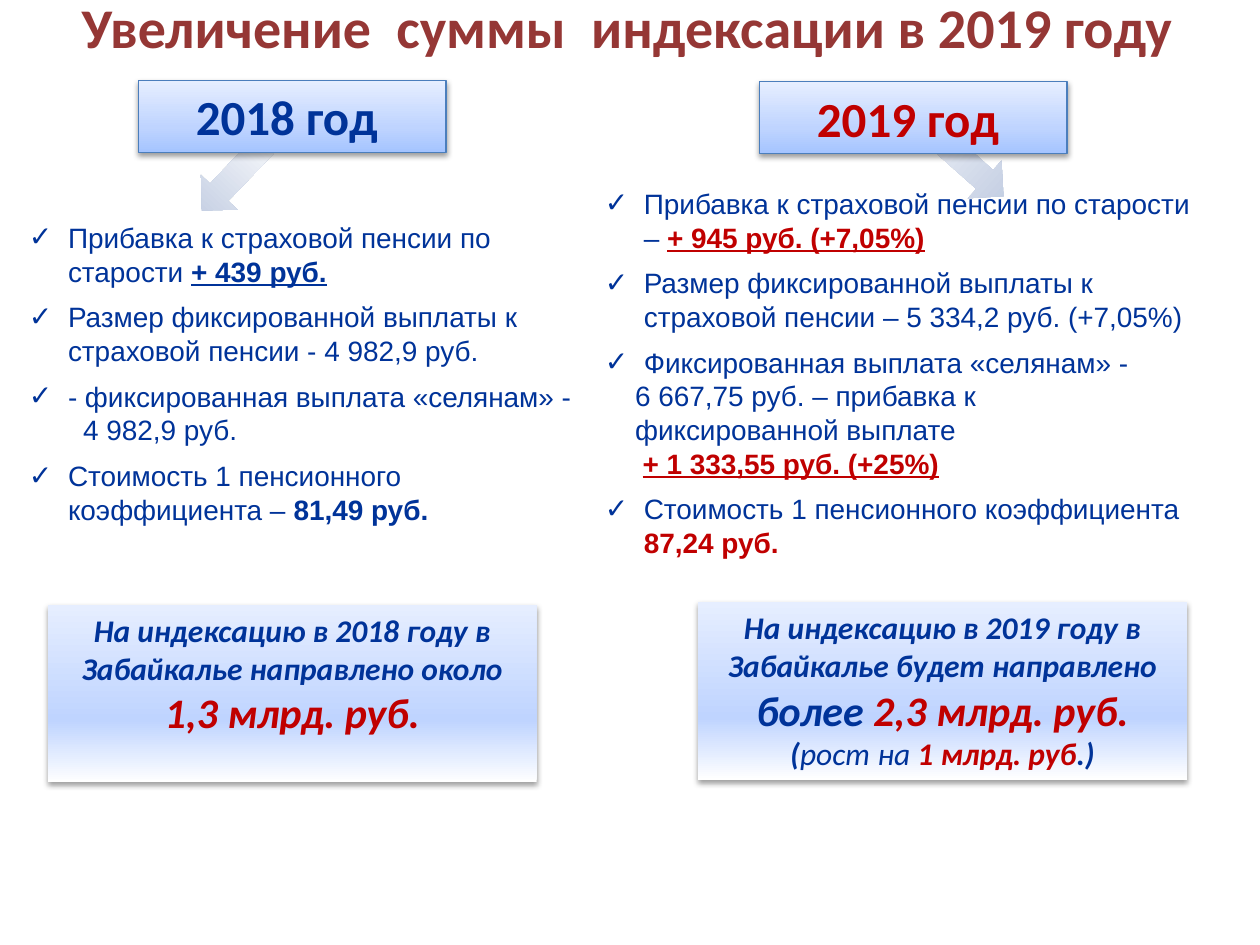
from pptx import Presentation, util as u
from pptx.dml.color import RGBColor
from pptx.enum import shapes, text
from pptx.oxml.ns import qn
from lxml import etree

Inches, Pt = u.Inches, u.Pt
HUES = {"title": "953735", "navy": "003399", "red": "C00000", "edge": "4B7EBC",
        "pale": "E6EEFF", "mid": "BFD4FF", "deep": "A4C4FF", "white": "FFFFFF",
        "arrow": "BCC8DF", "shade": "000000"}
HEAD = [(0, "deep"), (35, "mid"), (100, "pale")]
SUM = [(0, "white"), (35, "mid"), (100, "pale")]
FADE = [(0, "arrow"), (100, "white")]
STEP = 0.31  # hanging indent of the lists


def add(parent, tag, **attrs):
    return etree.SubElement(parent, qn(tag), attrs)


def write(par, runs, font, size, **base):
    """Add runs given as (words, colour, style letters among b, i, u)."""
    for words, hue, style, *own in runs:
        run = par.add_run()
        run.text = words
        face = run.font
        face.name, face.size = font, Pt(own[0] if own else size)
        face.bold, face.italic = "b" in style, "i" in style
        face.underline = "u" in style
        face.color.rgb = RGBColor.from_string(HUES[hue])


def place(shape, box):
    shape.left, shape.top, shape.width, shape.height = map(Inches, box)
    frame = shape.text_frame
    frame.word_wrap = True
    frame.auto_size = text.MSO_AUTO_SIZE.NONE
    frame.vertical_anchor = text.MSO_ANCHOR.TOP
    return frame


def shade(slide, kind, box, stops, cast=True):
    """Add a shape whose gradient runs upwards, with or without a shadow."""
    shape = slide.shapes.add_shape(kind, *map(Inches, box))
    shape.fill.gradient()
    shape.fill.gradient_angle = 90
    shape.line.fill.background()
    shape.shadow.inherit = False
    props = shape._element.spPr
    band = props.find(".//" + qn("a:gsLst"))
    for stop in list(band):
        band.remove(stop)
    for pos, hue in stops:
        add(add(band, "a:gs", pos=str(pos * 1000)), "a:srgbClr", val=HUES[hue])
    if cast:
        drop = add(props.find(qn("a:effectLst")), "a:outerShdw", blurRad="40000",
                   dist="20000", dir="5400000", rotWithShape="0")
        add(add(drop, "a:srgbClr", val=HUES["shade"]), "a:alpha", val="38000")
    return shape


def panel(slide, box, stops, pars, size, edge=False):
    shape = shade(slide, shapes.MSO_SHAPE.RECTANGLE, box, stops)
    if edge:
        shape.line.color.rgb = RGBColor.from_string(HUES["edge"])
        shape.line.width = Pt(0.75)
    frame = place(shape, box)
    for i, runs in enumerate(pars):
        par = frame.add_paragraph() if i else frame.paragraphs[0]
        par.alignment = text.PP_ALIGN.CENTER
        write(par, runs, "Calibri", size)


def arrow(slide, box, turn):
    shape = shade(slide, shapes.MSO_SHAPE.DOWN_ARROW, box, FADE, cast=False)
    shape.rotation = turn
    slide.shapes._spTree.insert(2, shape._element)  # behind the text


def facts(holder, box, items):
    """Fill a list of (left indent or None for a ticked item, runs)."""
    frame = place(holder, box)
    for i, (left, runs) in enumerate(items):
        par = frame.add_paragraph() if i else frame.paragraphs[0]
        props = par._p.get_or_add_pPr()
        tick = left is None
        props.set("marL", str(Inches(STEP if tick else left)))
        props.set("indent", str(Inches(-STEP if tick else 0)))
        if tick:
            add(props, "a:buFont", typeface="Arial")
            add(props, "a:buChar", char="✓")
        else:
            add(props, "a:buNone")
        par.line_spacing = 1.0
        par.space_before = Pt(7 if tick and i else 0)
        write(par, runs, "Arial", 16)


def heading(holder, box, words):
    frame = place(holder, box)
    frame.vertical_anchor = text.MSO_ANCHOR.MIDDLE
    par = frame.paragraphs[0]
    par.alignment = text.PP_ALIGN.CENTER
    write(par, [(words, "title", "b")], "Calibri", 32)


def column(slide, holder, year, hue, spots, turn, items, total):
    """Build one year: arrow, header, list and total."""
    head, point, body, foot = spots
    arrow(slide, point, turn)
    panel(slide, head, HEAD, [[(year + " год ", hue, "b")]], 28, edge=True)
    facts(holder, body, items)
    panel(slide, foot, SUM, total, 18)


OLD = [
    (None, [("Прибавка к страховой пенсии по старости ", "navy", ""),
            ("+ 439 руб.", "navy", "bu")]),
    (None, [("Размер фиксированной выплаты к страховой пенсии - 4 982,9 руб.",
             "navy", "")]),
    (None, [("- фиксированная выплата «селянам» -", "navy", "")]),
    (0.43, [("4 982,9 руб.", "navy", "")]),
    (None, [("Стоимость 1 пенсионного коэффициента – ", "navy", ""),
            ("81,49 руб.", "navy", "b")]),
]
NEW = [
    (None, [("Прибавка к страховой пенсии по старости – ", "navy", ""),
            ("+ 945 руб. (+7,05%)", "red", "bu")]),
    (None, [("Размер фиксированной выплаты к страховой пенсии – "
             "5 334,2 руб. (+7,05%)", "navy", "")]),
    (None, [("Фиксированная выплата «селянам» -", "navy", "")]),
    (0.24, [("6 667,75 руб. – прибавка к", "navy", "")]),
    (0.24, [("фиксированной выплате", "navy", "")]),
    (0.3, [("+ 1 333,55 руб. (+25%)", "red", "bu")]),
    (None, [("Стоимость 1 пенсионного коэффициента ", "navy", ""),
            ("87,24 руб.", "red", "b")]),
]
SPENT = [[("На индексацию в 2018 году в Забайкалье направлено около ", "navy", "bi"),
          ("1,3 млрд. руб.", "red", "bi", 24)]]
PLAN = [[("На индексацию в 2019 году в Забайкалье будет направлено ", "navy", "bi"),
         ("более ", "navy", "bi", 24), ("2,3 млрд. руб.", "red", "bi", 24)],
        [("(", "navy", "bi"), ("рост на ", "navy", "i"),
         ("1 млрд. руб", "red", "bi"), (".)", "navy", "bi")]]


def main():
    deck = Presentation()
    deck.slide_width, deck.slide_height = Inches(10), Inches(7.5)
    slide = deck.slides.add_slide(deck.slide_layouts[3])
    title, left, right = slide.placeholders
    heading(title, (-0.04, -0.11, 10.04, 0.64),
            "Увеличение  суммы  индексации в 2019 году")
    column(slide, left, "2018", "navy",
           [(1.1, 0.64, 2.44, 0.57), (1.65, 1.05, 0.4, 0.72),
            (0.13, 1.7, 4.55, 2.56), (0.38, 4.8, 3.88, 1.41)], 43.6, OLD, SPENT)
    column(slide, right, "2019", "red",
           [(6.03, 0.65, 2.44, 0.57), (7.38, 0.7, 0.4, 1.03),
            (4.7, 1.43, 4.9, 3.1), (5.54, 4.78, 3.88, 1.41)], 311.7, NEW, PLAN)
    deck.save("out.pptx")


if __name__ == "__main__":
    main()
